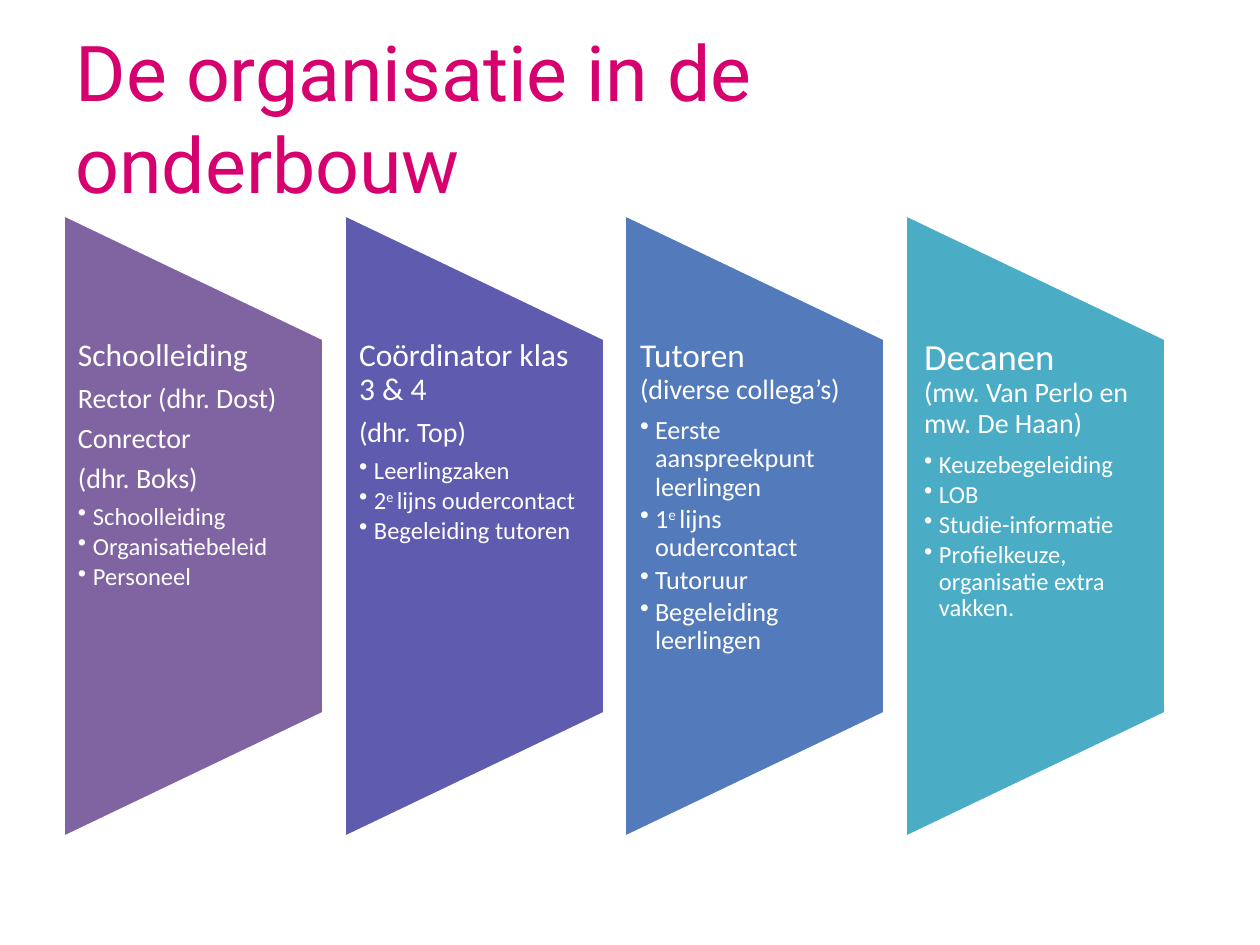
from lxml import etree
from pptx import Presentation
from pptx.dml.color import RGBColor
from pptx.enum.shapes import MSO_SHAPE
from pptx.enum.text import MSO_ANCHOR, MSO_AUTO_SIZE, PP_ALIGN
from pptx.oxml.ns import qn
from pptx.util import Emu, Pt

TRAPEZOID = MSO_SHAPE.FLOWCHART_MANUAL_OPERATION
TOP, MIDDLE = MSO_ANCHOR.TOP, MSO_ANCHOR.MIDDLE
LEFT = PP_ALIGN.LEFT
NO_FIT = MSO_AUTO_SIZE.NONE

WHITE = RGBColor(0xFF, 0xFF, 0xFF)
MAGENTA = RGBColor(0xD6, 0x00, 0x6E)
PURPLE = RGBColor(0x80, 0x64, 0xA2)
INDIGO = RGBColor(0x5F, 0x5B, 0xAE)
BLUE = RGBColor(0x53, 0x7A, 0xBA)
TEAL = RGBColor(0x4B, 0xAC, 0xC6)

PANEL_LEFT, PANEL_STEP = 63, 842 / 3
PANEL_WIDTH, PANEL_HEIGHT, PANEL_MIDDLE = 261, 624, 526
TEXT_TOP, TEXT_HEIGHT = 339, 374
BULLET_INDENT = 15

# Colour, side inset, heading paragraphs as (lines, sizes), bullet size, bullets.
# The second part of a bullet is raised.
PANELS = [
    (PURPLE, 15,
     [(["Schoolleiding"], [18]), (["Rector (dhr. Dost)"], [16]),
      (["Conrector"], [16]), (["(dhr. Boks)"], [16])],
     14, [["Schoolleiding"], ["Organisatiebeleid"], ["Personeel"]]),
    (INDIGO, 15,
     [(["Coördinator klas 3 & 4"], [18]), (["(dhr. Top)"], [16])],
     14, [["Leerlingzaken"], ["2", "e ", "lijns oudercontact"],
          ["Begeleiding tutoren"]]),
    (BLUE, 16,
     [(["Tutoren", "(diverse collega’s)"], [19, 16])],
     15, [["Eerste aanspreekpunt leerlingen"],
          ["1", "e ", "lijns oudercontact"],
          ["Tutoruur"], ["Begeleiding leerlingen"]]),
    (TEAL, 19,
     [(["Decanen", "(mw. Van Perlo en mw. De Haan)"], [21, 16])],
     14, [["Keuzebegeleiding"], ["LOB"], ["Studie-informatie"],
          ["Profielkeuze, organisatie extra vakken."]]),
]


def px(length):
    return Emu(round(length * 914400 / 126))


def add_span(para, text, size, font="Calibri", color=WHITE):
    span = para.add_run()
    span.text = text
    span.font.size = Pt(size)
    span.font.name = font
    span.font.color.rgb = color
    return span


deck = Presentation()
deck.slide_width, deck.slide_height = px(1260), px(945)
page = deck.slides.add_slide(deck.slide_layouts[5])

title = page.shapes.title
title.left, title.top, title.width, title.height = px(63), px(38), px(1102), px(158)
title.text_frame.auto_size = NO_FIT
title.text_frame.word_wrap = True
title.text_frame.vertical_anchor = MIDDLE
title.text_frame.margin_right = px(30)
title_para = title.text_frame.paragraphs[0]
title_para.alignment = LEFT
add_span(title_para, "De organisatie in de onderbouw", 44, "Roboto", MAGENTA)

for index, (color, inset, headings, bullet_size, bullets) in enumerate(PANELS):
    left = PANEL_LEFT + round(index * PANEL_STEP)

    # The trapezoid lies on its side, so its width is the panel's height.
    panel = page.shapes.add_shape(
        TRAPEZOID,
        px(left + (PANEL_WIDTH - PANEL_HEIGHT) / 2),
        px(PANEL_MIDDLE - PANEL_WIDTH / 2),
        px(PANEL_HEIGHT), px(PANEL_WIDTH))
    panel.rotation = 270
    panel.shadow.inherit = False
    panel.fill.solid()
    panel.fill.fore_color.rgb = color
    panel.line.color.rgb = WHITE
    panel.line.width = Pt(2)

    box = page.shapes.add_textbox(
        px(left), px(TEXT_TOP), px(PANEL_WIDTH), px(TEXT_HEIGHT))
    frame = box.text_frame
    frame.word_wrap = True
    frame.vertical_anchor = TOP
    frame.margin_left = frame.margin_right = px(inset)
    frame.margin_top = frame.margin_bottom = 0

    for number, (lines, sizes) in enumerate(headings):
        para = frame.add_paragraph() if number else frame.paragraphs[0]
        para.line_spacing = 0.9
        para.space_after = Pt(0.35 * sizes[0])
        for row, (line, size) in enumerate(zip(lines, sizes)):
            if row:
                para.add_line_break()
            add_span(para, line, size)

    for parts in bullets:
        para = frame.add_paragraph()
        para.level = 1
        para.line_spacing = 0.9
        para.space_after = Pt(0.15 * bullet_size)
        properties = para._p.get_or_add_pPr()
        properties.set("marL", str(px(BULLET_INDENT)))
        properties.set("indent", str(-px(BULLET_INDENT)))
        etree.SubElement(properties, qn("a:buChar")).set("char", "•")
        for position, part in enumerate(parts):
            span = add_span(para, part, bullet_size)
            if position == 1:
                span.font._element.set("baseline", "30000")

deck.save("out.pptx")
